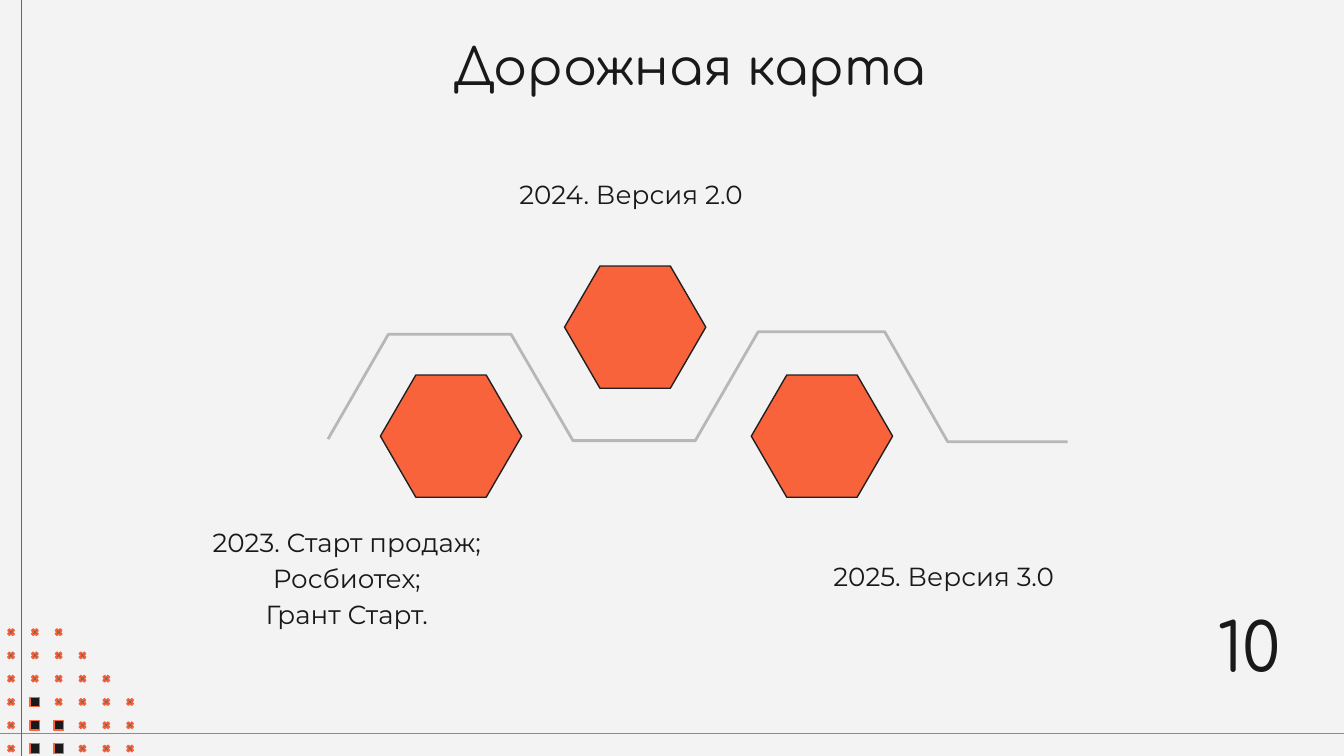
"""Builds the roadmap slide and saves it to out.pptx."""
from lxml import etree
from pptx import Presentation
from pptx import util as u
from pptx.dml.color import RGBColor
from pptx.enum import shapes, text
from pptx.oxml import ns

PAPER = RGBColor(0xF3, 0xF3, 0xF3)
INK = RGBColor(0x19, 0x19, 0x19)
OUTLINE = RGBColor(0x21, 0x1F, 0x1F)
ORANGE = RGBColor(0xF9, 0x63, 0x3B)
DARK_GREY = RGBColor(0x66, 0x66, 0x66)
LIGHT_GREY = RGBColor(0xB7, 0xB7, 0xB7)

WIDTH, HEIGHT = 25.4, 14.29
DOT, DOT_LEFT, DOT_TOP, STEP_X, STEP_Y = 0.18, 0.12, 11.86, 0.45, 0.44
ROW_COUNTS = (3, 4, 5, 6, 6, 6)
SQUARES = {(3, 1), (4, 1), (4, 2), (5, 1), (5, 2)}
TRAIL = ((6.2, 8.3), (7.34, 6.32), (9.66, 6.32), (10.83, 8.33), (13.14, 8.33),
         (14.33, 6.27), (16.72, 6.27), (17.91, 8.35), (20.18, 8.35))
HEXAGONS = ((14.2, 7.09), (10.67, 5.03), (7.19, 7.09))
MILESTONES = (
    ((3.23, 9.7, 6.65, 3.05), ("2023. Старт продаж;", "Росбиотех;", "Грант Старт.")),
    ((8.97, 3.12, 5.92, 1.27), ("2024. Версия 2.0",)),
    ((14.88, 10.34, 5.92, 1.27), ("2025. Версия 3.0",)),
)


class Deck:
    """Holds the style and the current slide."""

    heading_font = "Comfortaa"
    body_font = "Montserrat"
    inset = u.Cm(0.25)

    def __init__(self, prs):
        self.s = prs.slides.add_slide(prs.slide_layouts[6])
        self.s.background.fill.solid()
        self.s.background.fill.fore_color.rgb = PAPER

    def line(self, x1, y1, x2, y2, color, width=0.75):
        c = self.s.shapes.add_connector(
            shapes.MSO_CONNECTOR.STRAIGHT, u.Cm(x1), u.Cm(y1), u.Cm(x2), u.Cm(y2))
        c.line.color.rgb = color
        c.line.width = u.Pt(width)
        etree.SubElement(c._element.spPr, ns.qn("a:effectLst"))

    def shape(self, kind, x, y, w, h, fill, line, adj=None):
        sp = self.s.shapes.add_shape(kind, u.Cm(x), u.Cm(y), u.Cm(w), u.Cm(h))
        sp.shadow.inherit = False
        sp.fill.solid()
        sp.fill.fore_color.rgb = fill
        sp.line.color.rgb = line
        sp.line.width = u.Pt(0.75)
        if adj is not None:
            sp.adjustments[0] = adj

    def polyline(self, points, color, width):
        start, *rest = [(u.Cm(x), u.Cm(y)) for x, y in points]
        builder = self.s.shapes.build_freeform(*start)
        builder.add_line_segments(rest, close=False)
        sp = builder.convert_to_shape()
        sp.shadow.inherit = False
        sp.fill.background()
        sp.line.color.rgb = color
        sp.line.width = u.Pt(width)

    def text(self, box, lines, size, font, align=text.PP_ALIGN.CENTER,
             anchor=text.MSO_ANCHOR.TOP):
        tf = self.s.shapes.add_textbox(*map(u.Cm, box)).text_frame
        tf.word_wrap = True
        tf.vertical_anchor = anchor
        tf.margin_left = tf.margin_right = tf.margin_top = tf.margin_bottom = self.inset
        tf.text = "\n".join(lines)
        for i, p in enumerate(tf.paragraphs):
            p.alignment = align
            if i:
                p.line_spacing = 1.15
            for r in p.runs:
                r.font.name = font
                r.font.size = u.Pt(size)
                r.font.color.rgb = INK


def main():
    prs = Presentation()
    prs.slide_width, prs.slide_height = u.Cm(WIDTH), u.Cm(HEIGHT)
    deck = Deck(prs)

    deck.text((4.93, 0.46, 16.21, 1.6), ["Дорожная карта"], 27, deck.heading_font,
              anchor=text.MSO_ANCHOR.BOTTOM)

    deck.line(0, 13.87, WIDTH, 13.87, ORANGE)
    deck.line(0.41, 0, 0.41, HEIGHT, DARK_GREY, 0.5)
    for row, count in enumerate(ROW_COUNTS):
        for col in range(count):
            place = (DOT_LEFT + col * STEP_X, DOT_TOP + row * STEP_Y, DOT, DOT)
            if (row, col) in SQUARES:
                deck.shape(shapes.MSO_SHAPE.RECTANGLE, *place, INK, ORANGE)
            else:
                deck.shape(shapes.MSO_SHAPE.MATH_MULTIPLY, *place, DARK_GREY, ORANGE, 0.235)

    for box, lines in MILESTONES:
        deck.text(box, lines, 14, deck.body_font)

    deck.polyline(TRAIL, LIGHT_GREY, 1.5)
    for x, y in HEXAGONS:
        deck.shape(shapes.MSO_SHAPE.HEXAGON, x, y, 2.67, 2.31, ORANGE, OUTLINE, 0.29)

    deck.text((22.76, 11.2, 2.18, 2.18), ["10"], 36, deck.heading_font,
              align=text.PP_ALIGN.LEFT)
    prs.save("out.pptx")


if __name__ == "__main__":
    main()
